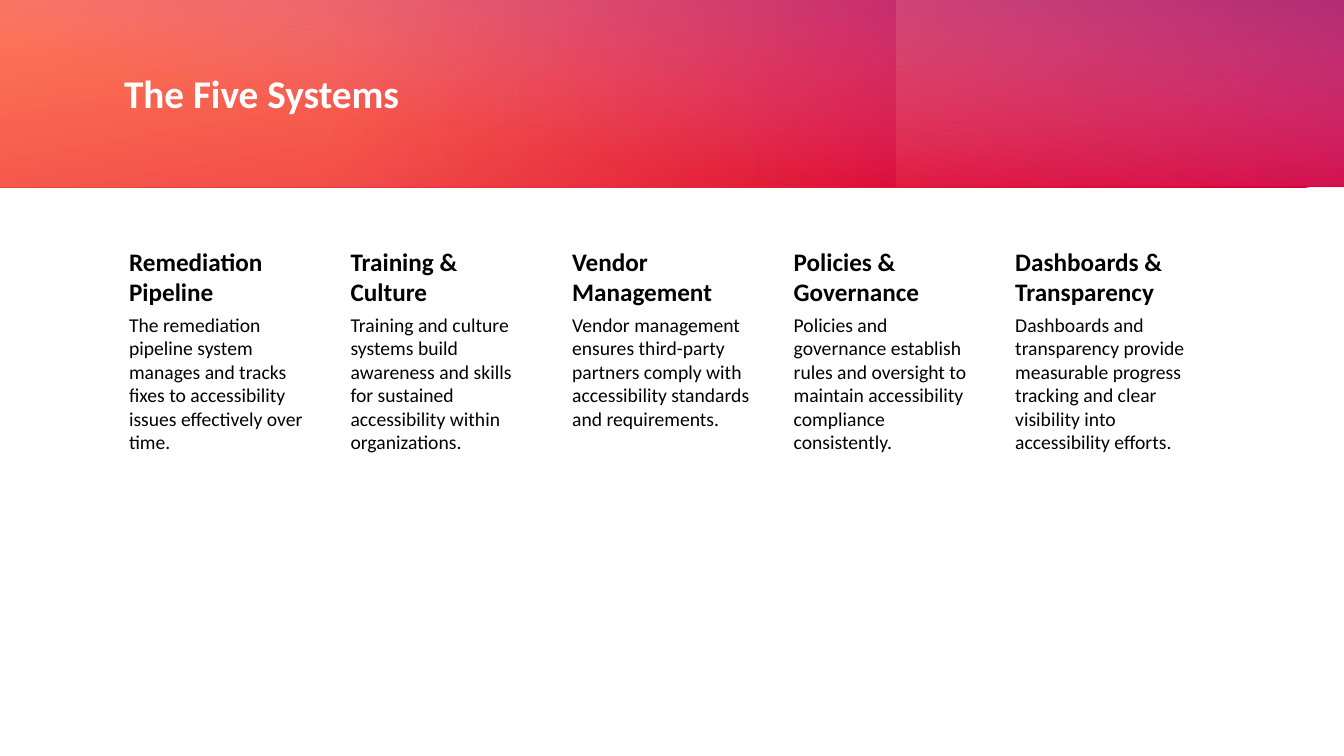
from lxml import etree
from pptx import Presentation
from pptx.dml.color import RGBColor
from pptx.enum import shapes, text
from pptx.oxml import ns
from pptx.util import Pt

FONT = "Calibri"
WHITE = RGBColor(0xFF, 0xFF, 0xFF)
BLACK = RGBColor(0, 0, 0)
RED = RGBColor(0xDA, 0x00, 0x2F)
PEACH = RGBColor(0xFF, 0x84, 0x63)
CORAL = RGBColor(0xFF, 0x6C, 0x4F)
PINK = RGBColor(0xD8, 0x61, 0xD4)
PURPLE = RGBColor(0x93, 0x25, 0x8E)

# box, angle, stops as (position %, colour, opacity %)
BANDS = [
    ((-0.7, 0, 961.2, 133.9), 260, [(0, RED, 100), (100, PEACH, 100)]),
    ((-0.7, 0, 640.1, 133.2), 0, [(37, CORAL, 42), (99, RED, 50)]),
    ((0.7, -0.7, 960.5, 133.2), 280, [(32, PINK, 0), (100, PURPLE, 66)]),
]

SYSTEMS = [
    ("Remediation Pipeline",
     "The remediation pipeline system manages and tracks fixes to "
     "accessibility issues effectively over time."),
    ("Training & Culture",
     "Training and culture systems build awareness and skills for "
     "sustained accessibility within organizations."),
    ("Vendor Management",
     "Vendor management ensures third-party partners comply with "
     "accessibility standards and requirements."),
    ("Policies & Governance",
     "Policies and governance establish rules and oversight to maintain "
     "accessibility compliance consistently."),
    ("Dashboards & Transparency",
     "Dashboards and transparency provide measurable progress tracking "
     "and clear visibility into accessibility efforts."),
]

LEFT, PITCH, WIDTH = 81.4, 158.25, 144
HEAD_TOP, HEAD_HIGH = 173.5, 48.3
BODY_TOP, BODY_HIGH = HEAD_TOP + HEAD_HIGH, 272.2


def write(frame, words, size, color=BLACK, bold=False, inset=None,
          anchor=text.MSO_ANCHOR.TOP, spacing=None):
    """Fill a text frame; inset is (left, other sides)."""
    frame.word_wrap = True
    frame.auto_size = text.MSO_AUTO_SIZE.NONE
    frame.vertical_anchor = anchor
    if inset:
        frame.margin_left = Pt(inset[0])
        frame.margin_top = frame.margin_right = Pt(inset[1])
        frame.margin_bottom = Pt(inset[1])
    para = frame.paragraphs[0]
    para.alignment = text.PP_ALIGN.LEFT
    para.line_spacing = spacing
    run = para.add_run()
    run.text = words
    font = run.font
    font.name, font.size, font.bold = FONT, Pt(size), bold
    font.color.rgb = color


def add_band(slide, box, angle, stops):
    """Add a borderless rectangle with a translucent linear gradient."""
    band = slide.shapes.add_shape(shapes.MSO_SHAPE.RECTANGLE, *map(Pt, box))
    band.shadow.inherit = False
    band.line.fill.background()
    band.fill.gradient()
    grad = band._element.spPr.find(ns.qn("a:gradFill"))
    grad.find(ns.qn("a:lin")).set("ang", str(angle * 60000))
    gs_list = grad.find(ns.qn("a:gsLst"))
    for old in list(gs_list):
        gs_list.remove(old)
    for pos, color, alpha in stops:
        stop = etree.SubElement(gs_list, ns.qn("a:gs"), pos=str(pos * 1000))
        tint = etree.SubElement(stop, ns.qn("a:srgbClr"), val=str(color))
        etree.SubElement(tint, ns.qn("a:alpha"), val=str(alpha * 1000))


def set_title(slide, words):
    title = slide.shapes.title
    title.left, title.top = Pt(LEFT), Pt(27.4)
    title.width, title.height = Pt(777.6), Pt(81.4)
    write(title.text_frame, words, 28, color=WHITE, bold=True,
          anchor=text.MSO_ANCHOR.MIDDLE, spacing=0.9)
    # Bring the title in front of the bands
    slide.shapes._spTree.append(title._element)


def add_column(slide, left, head, body):
    group = slide.shapes.add_group_shape()
    top = group.shapes.add_textbox(
        Pt(left), Pt(HEAD_TOP), Pt(WIDTH), Pt(HEAD_HIGH))
    write(top.text_frame, head, 18, bold=True, inset=(10.8, 2.2))
    low = group.shapes.add_textbox(
        Pt(left), Pt(BODY_TOP), Pt(WIDTH), Pt(BODY_HIGH))
    write(low.text_frame, body, 14, inset=(10.8, 1.4))


def main():
    deck = Presentation()
    deck.slide_width, deck.slide_height = Pt(960), Pt(540)
    slide = deck.slides.add_slide(deck.slide_layouts[5])
    for box, angle, stops in BANDS:
        add_band(slide, box, angle, stops)
    set_title(slide, "The Five Systems")
    for i, (head, body) in enumerate(SYSTEMS):
        add_column(slide, LEFT + i * PITCH, head, body)
    deck.save("out.pptx")


if __name__ == "__main__":
    main()
